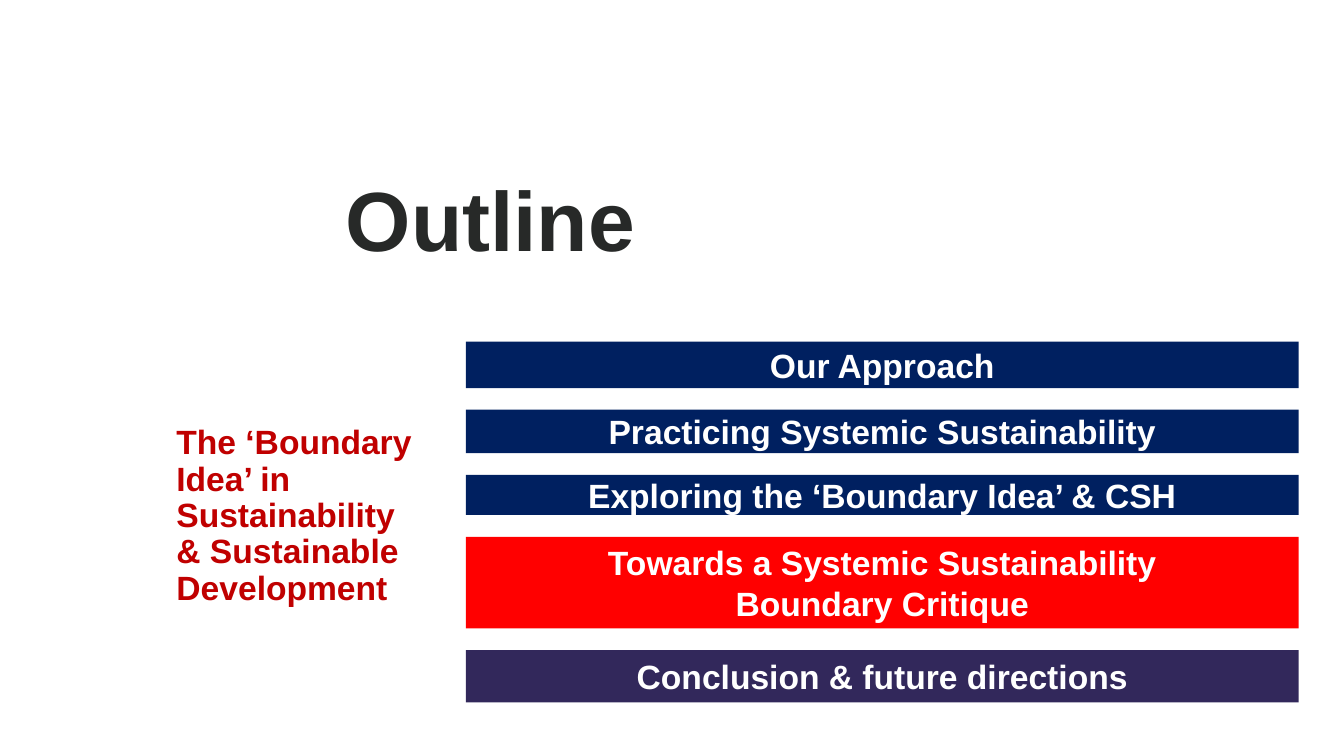
import pptx
import pptx.dml.color
import pptx.enum.shapes
import pptx.enum.text
import pptx.util

COLORS = {
    "title": "272928",
    "theme": "C00000",
    "section": "002060",
    "current": "FF0000",
    "closing": "32285B",
    "on_bar": "FFFFFF",
}
BAR_WIDTH = 61.97
BAR_GAP = 2.87

# Each section: height in percent of the slide, fill, lines of text
SECTIONS = [
    (6.13, "section", ["Our Approach"]),
    (5.73, "section", ["Practicing Systemic Sustainability"]),
    (5.33, "section", ["Exploring the ‘Boundary Idea’ & CSH"]),
    (12.13, "current", ["Towards a Systemic Sustainability", "Boundary Critique"]),
    (6.93, "closing", ["Conclusion & future directions"]),
]


def rgb(name):
    return pptx.dml.color.RGBColor.from_string(COLORS[name])


class OutlineSlide:
    """Holds the style and the slide; all lengths are percent of the slide's size."""

    font = "Arial"
    align = pptx.enum.text.PP_ALIGN
    anchor = pptx.enum.text.MSO_ANCHOR

    def __init__(self, deck):
        self.deck = deck
        self.slide = deck.slides.add_slide(deck.slide_layouts[5])

    def box(self, left, top, width, height):
        across, down = self.deck.slide_width / 100, self.deck.slide_height / 100
        return [pptx.util.Emu(round(length)) for length in
                (left * across, top * down, width * across, height * down)]

    def add_lines(self, frame, lines, size, color, align, spacing):
        frame.word_wrap = True
        for number, line in enumerate(lines):
            paragraph = frame.add_paragraph() if number else frame.paragraphs[0]
            paragraph.alignment = align
            paragraph.line_spacing = spacing
            run = paragraph.add_run()
            run.text = line
            run.font.name = self.font
            run.font.size = pptx.util.Pt(size)
            run.font.bold = True
            run.font.color.rgb = rgb(color)

    def inset(self, frame, top, bottom):
        frame.margin_left = frame.margin_right = pptx.util.Inches(0.31)
        frame.margin_top = pptx.util.Inches(top)
        frame.margin_bottom = pptx.util.Inches(bottom)

    def title(self, text, *place):
        heading = self.slide.shapes.title
        heading.left, heading.top, heading.width, heading.height = self.box(*place)
        frame = heading.text_frame
        self.inset(frame, 0, 0)
        frame.vertical_anchor = self.anchor.BOTTOM
        frame.auto_size = pptx.enum.text.MSO_AUTO_SIZE.SHAPE_TO_FIT_TEXT
        self.add_lines(frame, [text], 60, "title", self.align.LEFT, 0.9)

    def theme(self, text, *place):
        frame = self.slide.shapes.add_textbox(*self.box(*place)).text_frame
        self.inset(frame, 0.08, 0.05)
        frame.vertical_anchor = self.anchor.MIDDLE
        self.add_lines(frame, [text], 24, "theme", self.align.LEFT, 0.9)

    def bar(self, lines, fill, *place):
        bar = self.slide.shapes.add_shape(
            pptx.enum.shapes.MSO_SHAPE.RECTANGLE, *self.box(*place))
        bar.shadow.inherit = False
        bar.fill.solid()
        bar.fill.fore_color.rgb = rgb(fill)
        bar.line.fill.background()
        bar.text_frame.vertical_anchor = self.anchor.MIDDLE
        self.add_lines(bar.text_frame, lines, 24, "on_bar", self.align.CENTER, 1.0)


def main():
    deck = pptx.Presentation()
    deck.slide_width = pptx.util.Inches(13.33)
    deck.slide_height = pptx.util.Inches(7.5)
    outline = OutlineSlide(deck)
    outline.title("Outline", 23.41, 23.6, BAR_WIDTH, 12.13)
    outline.theme("The ‘Boundary Idea’ in Sustainability & Sustainable Development",
                  10.8, 38.53, 22.58, 59.2)
    top = 45.2
    for height, fill, lines in SECTIONS:
        outline.bar(lines, fill, 34.66, top, BAR_WIDTH, height)
        top += height + BAR_GAP
    deck.save("out.pptx")


if __name__ == "__main__":
    main()
